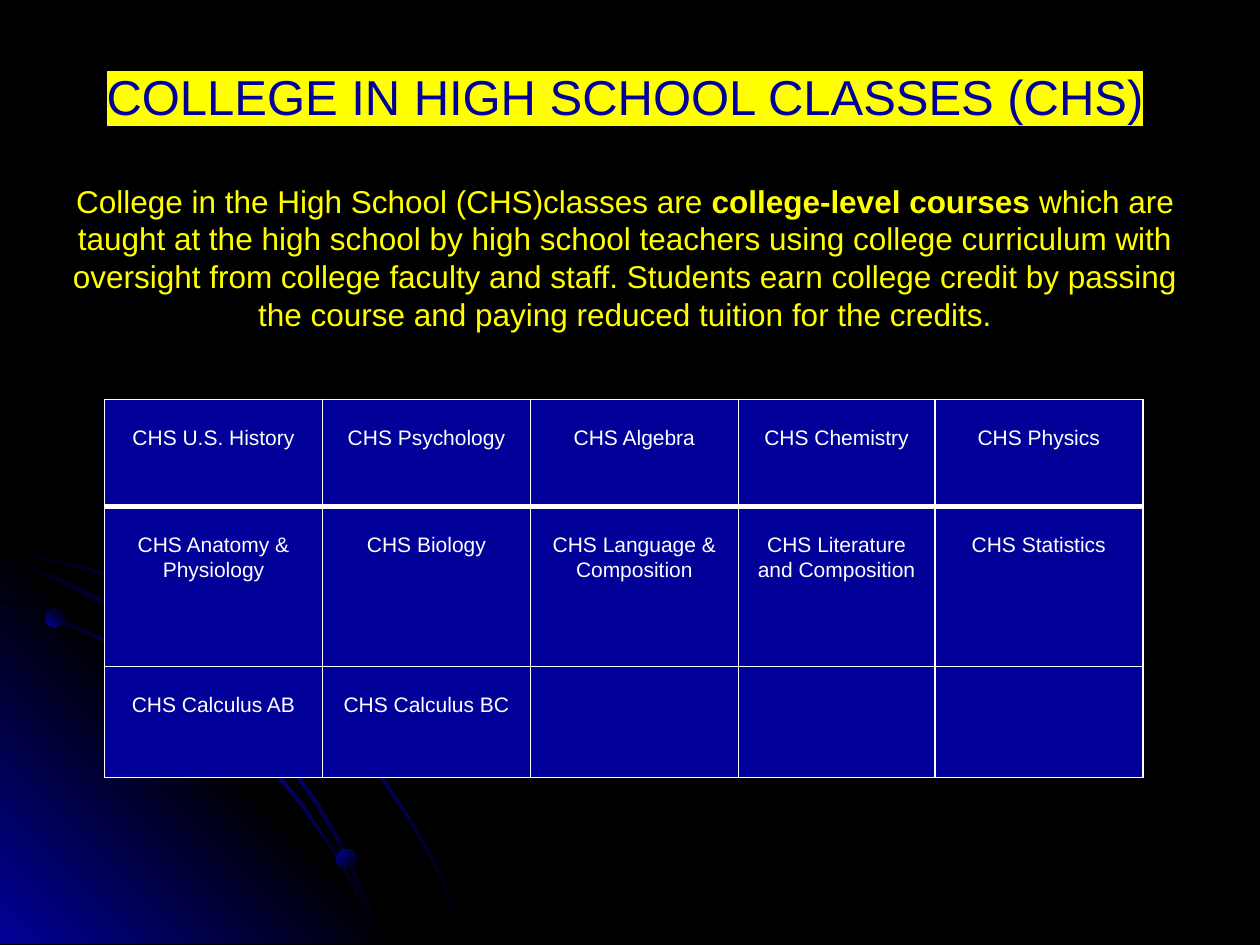
"""Build the College in High School classes slide."""
from lxml import etree
from pptx import Presentation
from pptx import util as u
from pptx.dml.color import RGBColor
from pptx.enum import shapes, text
from pptx.oxml import ns

COLORS = {"black": "000000", "navy": "010199", "yellow": "FFFF00", "white": "FFFFFF"}
FONT = "Arial"
UNIT = u.Inches(0.01)


def paint_gradient(shape, names, angle):
    shape.shadow.inherit = False
    shape.line.fill.background()
    shape.fill.gradient()
    shape.fill.gradient_angle = angle
    stops = shape._element.spPr.find(".//" + ns.qn("a:gsLst"))
    for stop in list(stops):
        stops.remove(stop)
    for i, name in enumerate(names):
        stop = etree.SubElement(stops, ns.qn("a:gs"), pos=str(100000 * i // (len(names) - 1)))
        etree.SubElement(stop, ns.qn("a:srgbClr"), val=COLORS[name])


def style_run(run, size, color, bold=False):
    run.font.size = u.Pt(size)
    run.font.bold = bold
    run.font.color.rgb = RGBColor.from_string(COLORS[color])
    run.font.name = FONT


deck = Presentation()
deck.slide_width, deck.slide_height = u.Inches(10), u.Inches(7.5)
slide = deck.slides.add_slide(deck.slide_layouts[6])
slide.background.fill.solid()
slide.background.fill.fore_color.rgb = RGBColor.from_string(COLORS["black"])

glow = ["black", "navy", "black"]
outer_arc = [
    (57, 447), (28, 441), (0, 435), (0, 438), (28, 443), (56, 449), (97, 461), (135, 478),
    (173, 499), (208, 523), (241, 549), (271, 579), (298, 612), (323, 649), (337, 673),
    (350, 698), (360, 723), (370, 749), (372, 749), (362, 723), (352, 698), (339, 673),
    (325, 648), (300, 611), (272, 578), (242, 548), (209, 521), (174, 497), (136, 477), (98, 459)]
corner = [(322, 749), (0, 749), (0, 427)]
lower_arc = [
    (285, 714), (294, 732), (301, 749), (303, 749), (296, 730), (286, 712), (266, 676),
    (242, 640), (215, 606), (184, 576), (152, 549), (117, 526), (79, 505), (41, 488), (0, 475),
    (0, 477), (39, 490), (77, 507), (115, 528), (150, 551), (183, 578), (213, 608), (240, 641),
    (265, 677)]
middle_arc = [
    (0, 442), (0, 444), (36, 457), (74, 475), (109, 494), (142, 518), (173, 544), (202, 575),
    (227, 605), (252, 641), (267, 667), (280, 694), (292, 722), (301, 749), (303, 749),
    (294, 720), (282, 693), (269, 665), (254, 639), (229, 603), (204, 573), (175, 543),
    (144, 516), (111, 493), (76, 473), (39, 455)]
for outline, names, angle in [
    (outer_arc, glow, 315),
    (corner, ["navy", "black", "navy"], 45),
    (lower_arc, glow, 315),
    (middle_arc, glow, 315),
]:
    pen = slide.shapes.build_freeform(*outline[0], scale=UNIT)
    pen.add_line_segments(outline[1:], close=True)
    paint_gradient(pen.convert_to_shape(), names, angle)

for left, top, size, angle in [(0.36, 4.83, 0.15, 45), (2.67, 6.74, 0.16, 315)]:
    bead = slide.shapes.add_shape(
        shapes.MSO_SHAPE.OVAL, u.Inches(left), u.Inches(top), u.Inches(size), u.Inches(size))
    paint_gradient(bead, ["navy", "black"], angle)

intro = slide.shapes.add_textbox(
    u.Inches(0.42), u.Inches(0.33), u.Inches(9.08), u.Inches(2.75)).text_frame
intro.word_wrap = True
intro.vertical_anchor = text.MSO_ANCHOR.TOP
intro.margin_top = u.Inches(0.2)
heading = intro.paragraphs[0]
heading.text = "COLLEGE IN HIGH SCHOOL CLASSES (CHS)"
heading.alignment = text.PP_ALIGN.CENTER
style_run(heading.runs[0], 28, "navy")
heading_color = heading.runs[0]._r.rPr.find(ns.qn("a:solidFill"))
highlight = etree.Element(ns.qn("a:highlight"))
etree.SubElement(highlight, ns.qn("a:srgbClr"), val=COLORS["yellow"])
heading_color.addnext(highlight)

description = intro.add_paragraph()
description.alignment = text.PP_ALIGN.CENTER
description.space_before = u.Pt(32)
for words, bold in [
    ("College in the High School (CHS)classes are\u00a0", False),
    ("college-level courses", True),
    ("\u00a0which are taught at the high school by high school teachers using college "
     "curriculum with oversight from college faculty and staff. Students earn college credit "
     "by passing the course and paying reduced tuition for the credits.", False),
]:
    run = description.add_run()
    run.text = words
    style_run(run, 18, "yellow", bold)

courses = [
    ["U.S. History", "Psychology", "Algebra", "Chemistry", "Physics"],
    ["Anatomy & Physiology", "Biology", "Language & Composition",
     "Literature and Composition", "Statistics"],
    ["Calculus AB", "Calculus BC", "", "", ""],
]
widths = [1.73, 1.65, 1.65, 1.56, 1.65]
heights = [0.85, 1.27, 0.88]
grid = slide.shapes.add_table(
    len(heights), len(widths), u.Inches(0.83), u.Inches(3.17),
    u.Inches(sum(widths)), u.Inches(sum(heights))).table
grid.first_row = grid.horz_banding = False
for column, width in zip(grid.columns, widths):
    column.width = u.Inches(width)
for row, height in zip(grid.rows, heights):
    row.height = u.Inches(height)

for r, subjects in enumerate(courses):
    for c, subject in enumerate(subjects):
        cell = grid.cell(r, c)
        cell.margin_left = cell.margin_right = u.Inches(0.07)
        cell.margin_top, cell.margin_bottom = u.Inches(0.2), 0
        cell.fill.solid()
        cell.fill.fore_color.rgb = RGBColor.from_string(COLORS["navy"])
        if subject:
            label = cell.text_frame.paragraphs[0]
            label.text = "CHS " + subject
            label.alignment = text.PP_ALIGN.CENTER
            label.line_spacing = 1.07
            style_run(label.runs[0], 12, "white")
        for i, side in enumerate(["lnL", "lnR", "lnT", "lnB"]):
            points = 3 if (r, side) in [(0, "lnB"), (1, "lnT")] else 1
            edge = etree.Element(ns.qn("a:" + side), w=str(u.Pt(points)))
            paint = etree.SubElement(edge, ns.qn("a:solidFill"))
            etree.SubElement(paint, ns.qn("a:srgbClr"), val=COLORS["white"])
            cell._tc.tcPr.insert(i, edge)

deck.save("out.pptx")
